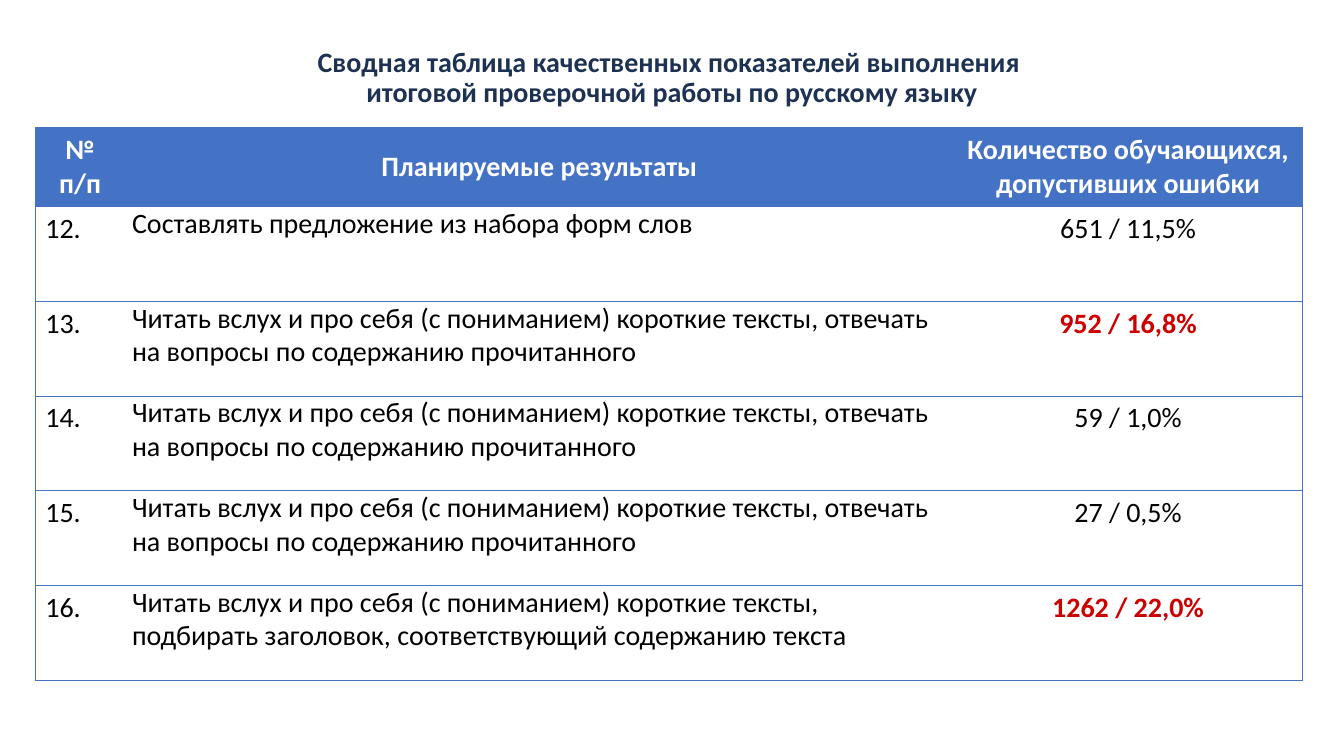
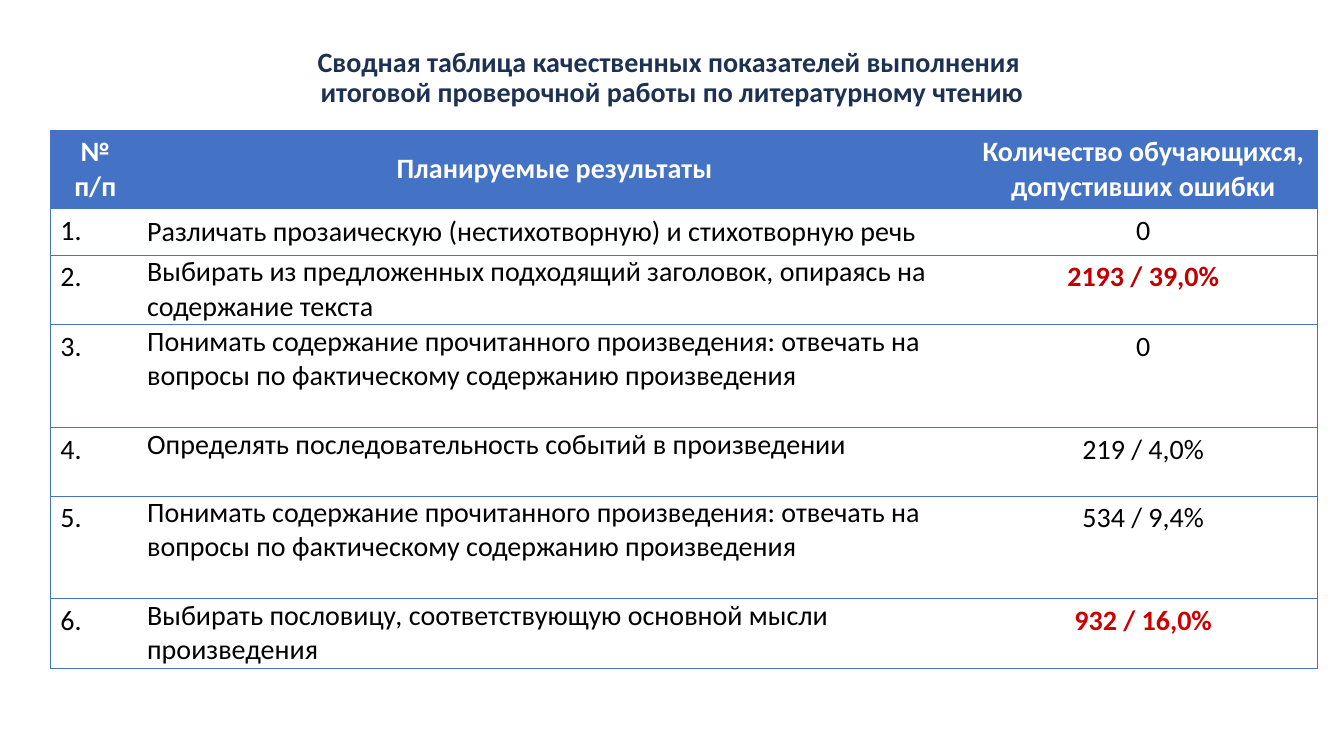
from dataclasses import dataclass

from lxml.etree import SubElement
from pptx import Presentation
from pptx.dml.color import RGBColor as RGB
from pptx.enum.text import MSO_ANCHOR as ANCHOR, MSO_AUTO_SIZE as AUTO, PP_ALIGN as ALIGN
from pptx.oxml.ns import qn
from pptx.util import Inches, Pt


@dataclass(frozen=True)
class Theme:
    """Colours, type and line sizes shared by the slides."""
    font: str = "Calibri"
    size: float = 20
    title: str = "1D3152"
    accent: str = "4472C4"
    white: str = "FFFFFF"
    black: str = "000000"
    red: str = "CC0000"
    dark_red: str = "C00000"
    line: float = 0.5
    title_spacing: float = 0.9


@dataclass(frozen=True)
class Row:
    """One line of a results table."""
    height: float
    skill: str
    errors: str
    color: str = Theme.black
    anchor: ANCHOR = ANCHOR.TOP


THEME = Theme()
TITLE_BOX = (0.77, 0.27, 11.79, 1.01)
COLUMNS = (0.89, 8.22, 3.46)
HEADINGS = ("№ п/п", "Планируемые результаты", "Количество обучающихся, допустивших ошибки")
TITLE = "Сводная таблица качественных показателей выполнения \vитоговой проверочной работы по "

READ_ANSWER = ("Читать вслух и про себя (с пониманием) короткие тексты, отвечать "
               "на вопросы по содержанию прочитанного")
READ_TITLE = ("Читать вслух и про себя (с пониманием) короткие тексты, подбирать заголовок, "
              "соответствующий содержанию текста")
UNDERSTAND = ("Понимать содержание прочитанного произведения: отвечать на вопросы "
              "по фактическому содержанию произведения")

RUSSIAN = [
    Row(0.94, "Составлять предложение из набора форм слов", "651 / 11,5%"),
    Row(0.94, READ_ANSWER, "952 / 16,8%", THEME.red),
    Row(0.94, READ_ANSWER, "59 / 1,0%"),
    Row(0.94, READ_ANSWER, "27 / 0,5%"),
    Row(0.94, READ_TITLE, "1262 / 22,0%", THEME.red),
]
READING = [
    Row(0.46, "Различать прозаическую (нестихотворную) и стихотворную речь", "0",
        anchor=ANCHOR.MIDDLE),
    Row(0.69, "Выбирать из предложенных подходящий заголовок, опираясь на содержание текста",
        "2193 / 39,0%", THEME.dark_red),
    Row(1.02, UNDERSTAND, "0"),
    Row(0.68, "Определять последовательность событий в произведении", "219 / 4,0%"),
    Row(1.02, UNDERSTAND, "534 / 9,4%"),
    Row(0.69, "Выбирать пословицу, соответствующую основной мысли произведения",
        "932 / 16,0%", THEME.red),
]


def style_text(tf, color, bold=False, align=ALIGN.LEFT, spacing=None):
    """Format every run of a text frame."""
    for p in tf.paragraphs:
        p.alignment = align
        p.line_spacing = spacing
        for r in p.runs:
            r.font.name = THEME.font
            r.font.size = Pt(THEME.size)
            r.font.bold = bold
            r.font.color.rgb = RGB.from_string(color)


def add_borders(cell, sides):
    """Draw the named sides of a cell and hide the others."""
    pr = cell._tc.get_or_add_tcPr()
    for side in "LRTB":
        ln = SubElement(pr, qn("a:ln" + side), w=str(Pt(THEME.line)))
        if side in sides:
            fill = SubElement(ln, qn("a:solidFill"))
            SubElement(fill, qn("a:srgbClr"), val=THEME.accent)
        else:
            SubElement(ln, qn("a:noFill"))


def fill_cell(cell, text, color, bold=False, align=ALIGN.LEFT, anchor=ANCHOR.TOP, spacing=None):
    """Set the text and alignment of a cell."""
    cell.text_frame.text = text
    cell.vertical_anchor = anchor
    style_text(cell.text_frame, color, bold, align, spacing)


def add_title(s, text, box):
    """Place the slide title in the given box."""
    sp = s.shapes.title
    sp.left, sp.top, sp.width, sp.height = map(Inches, box)
    tf = sp.text_frame
    tf.text = text
    tf.word_wrap = True
    tf.auto_size = AUTO.NONE
    tf.vertical_anchor = ANCHOR.MIDDLE
    style_text(tf, THEME.title, True, ALIGN.CENTER, THEME.title_spacing)


def add_results(s, rows, left, top, header, first, spacing):
    """Place a results table with its numbering starting at first."""
    heights = [header] + [row.height for row in rows]
    table = s.shapes.add_table(len(heights), len(COLUMNS), Inches(left), Inches(top),
                               Inches(sum(COLUMNS)), Inches(sum(heights))).table
    table.first_row = table.horz_banding = False
    for column, width in zip(table.columns, COLUMNS):
        column.width = Inches(width)
    for line, height in zip(table.rows, heights):
        line.height = Inches(height)
        for cell, sides in zip(line.cells, ("LTB", "TB", "RTB")):
            add_borders(cell, sides)
            cell.fill.background()
    for cell, text in zip(table.rows[0].cells, HEADINGS):
        cell.fill.solid()
        cell.fill.fore_color.rgb = RGB.from_string(THEME.accent)
        fill_cell(cell, text, THEME.white, True, ALIGN.CENTER, ANCHOR.MIDDLE)
    for i, row in enumerate(rows):
        number, skill, errors = table.rows[i + 1].cells
        fill_cell(number, f"{first + i}.", THEME.black)
        skill.margin_left = skill.margin_right = Inches(0.07)
        skill.margin_top = skill.margin_bottom = 0
        fill_cell(skill, row.skill, THEME.black, anchor=row.anchor, spacing=spacing)
        fill_cell(errors, row.errors, row.color, row.color != THEME.black, ALIGN.CENTER)


def add_results_slide(prs, subject, rows, left, top, header, first, spacing=None):
    """Add a slide with a title and a results table."""
    s = prs.slides.add_slide(prs.slide_layouts.get_by_name("Title Only"))
    add_title(s, TITLE + subject, TITLE_BOX)
    add_results(s, rows, left, top, header, first, spacing)


def main():
    """Build and save the presentation."""
    prs = Presentation()
    prs.slide_width, prs.slide_height = Inches(13.33), Inches(7.5)
    add_results_slide(prs, "русскому языку", RUSSIAN, 0.35, 1.26, 0.79, 12, 0.98)
    add_results_slide(prs, "литературному чтению", READING, 0.5, 1.29, 0.78, 1)
    prs.save("out.pptx")


if __name__ == "__main__":
    main()
